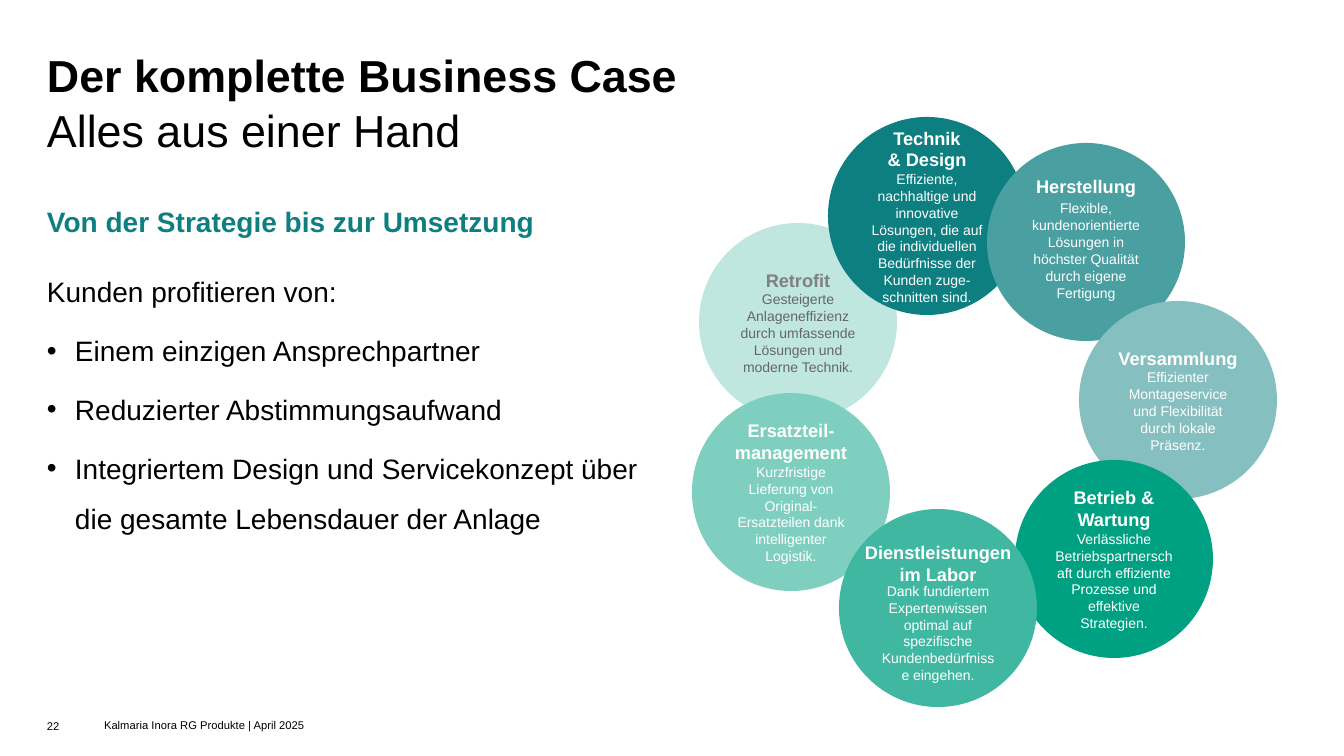
from lxml import etree
from pptx import Presentation, util as u
from pptx.dml.color import RGBColor
from pptx.enum import shapes, text
from pptx.oxml.ns import qn

BLACK = RGBColor(0x00, 0x00, 0x00)
WHITE = RGBColor(0xFF, 0xFF, 0xFF)
TEAL = RGBColor(0x0E, 0x7F, 0x80)
TEAL_MID = RGBColor(0x4A, 0x9F, 0xA0)
TEAL_PALE = RGBColor(0x86, 0xBF, 0xBF)
GREEN = RGBColor(0x00, 0xA0, 0x82)
GREEN_MID = RGBColor(0x40, 0xB8, 0xA1)
GREEN_PALE = RGBColor(0x7F, 0xCF, 0xC0)
MINT = RGBColor(0xBF, 0xE7, 0xE0)
GREY = RGBColor(0x80, 0x80, 0x80)
DARK_GREY = RGBColor(0x66, 0x66, 0x66)

FONT = "Arial"
PX = 914400 / 100.8
DIAMETER = 198
INSET_X, INSET_Y = 10, 5
INDENT = 28

TITLE = "Der komplette Business Case"
SUBTITLE = "Alles aus einer Hand"
LEAD = "Von der Strategie bis zur Umsetzung"
INTRO = "Kunden profitieren von:"
BENEFITS = [
    "Einem einzigen Ansprechpartner",
    "Reduzierter Abstimmungsaufwand",
    "Integriertem Design und Servicekonzept über die gesamte Lebensdauer der Anlage",
]
PAGE = "22"
FOOTER = "Kalmaria Inora RG Produkte | April 2025"

# left, top, fill, heading colour, body colour, heading lines, body, extra top inset
CIRCLES = [
    (699, 223, MINT, GREY, DARK_GREY, ["Retrofit"],
     "Gesteigerte Anlageneffizienz durch umfassende Lösungen und moderne Technik.", 0),
    (828, 117, TEAL, WHITE, WHITE, ["Technik", "& Design"],
     "Effiziente, nachhaltige und innovative Lösungen, die auf die individuellen "
     "Bedürfnisse der Kunden zuge-schnitten sind.", 0),
    (987, 143, TEAL_MID, WHITE, WHITE, [],
     "Flexible, kundenorientierte Lösungen in höchster Qualität durch eigene Fertigung", 17),
    (1079, 301, TEAL_PALE, WHITE, WHITE, ["Versammlung"],
     "Effizienter Montageservice und Flexibilität durch lokale Präsenz.", 0),
    (1015, 460, GREEN, WHITE, WHITE, ["Betrieb & Wartung"],
     "Verlässliche Betriebspartnerschaft durch effiziente Prozesse und effektive Strategien.", 0),
    (692, 393, GREEN_PALE, WHITE, WHITE, ["Ersatzteil-management"],
     "Kurzfristige Lieferung von Original-Ersatzteilen dank intelligenter Logistik.", 0),
    (839, 509, GREEN_MID, WHITE, WHITE, [],
     "Dank fundiertem Expertenwissen optimal auf spezifische Kundenbedürfnisse eingehen.", 50),
]
# Headings wider than the text area of their circle
WIDE_HEADINGS = [
    ((1003, 170, 166, 32), "Herstellung"),
    ((851, 536, 174, 54), "Dienstleistungen im Labor"),
]


def px(n):
    return u.Emu(round(n * PX))


def set_frame(sp, inset_x=0, inset_y=0, extra_top=0, anchor=text.MSO_ANCHOR.TOP):
    tf = sp.text_frame
    tf.word_wrap = True
    tf.auto_size = text.MSO_AUTO_SIZE.NONE
    tf.vertical_anchor = anchor
    tf.margin_left = tf.margin_right = px(inset_x)
    tf.margin_top = px(inset_y + extra_top)
    tf.margin_bottom = px(inset_y)
    return tf


def add_paragraph(tf, words, size, color=BLACK, bold=False,
                  align=text.PP_ALIGN.LEFT, bullet=False):
    """Fill the empty first paragraph, or append a new one."""
    p = tf.paragraphs[0] if not tf.paragraphs[0].runs else tf.add_paragraph()
    if bullet:
        pPr = p._p.get_or_add_pPr()
        pPr.set("marL", str(px(INDENT)))
        pPr.set("indent", str(-px(INDENT)))
        etree.SubElement(pPr, qn("a:buFont")).set("typeface", FONT)
        etree.SubElement(pPr, qn("a:buChar")).set("char", "•")
    p.alignment = align
    r = p.add_run()
    r.text = words
    r.font.name, r.font.size, r.font.bold = FONT, u.Pt(size), bold
    r.font.color.rgb = color
    return p


def add_box(s, box, anchor=text.MSO_ANCHOR.TOP, inset_x=0, inset_y=0):
    sp = s.shapes.add_textbox(*map(px, box))
    return set_frame(sp, inset_x, inset_y, anchor=anchor)


def add_circle(s, left, top, fill, head_color, body_color, heading, body, extra_top):
    sp = s.shapes.add_shape(shapes.MSO_SHAPE.OVAL, *map(px, (left, top, DIAMETER, DIAMETER)))
    sp.shadow.inherit = False
    sp.fill.solid()
    sp.fill.fore_color.rgb = fill
    sp.line.fill.background()
    tf = set_frame(sp, INSET_X, INSET_Y, extra_top, text.MSO_ANCHOR.MIDDLE)
    for line in heading:
        add_paragraph(tf, line, 13, head_color, True, text.PP_ALIGN.CENTER)
    add_paragraph(tf, body, 10, body_color, align=text.PP_ALIGN.CENTER)


def main():
    prs = Presentation()
    prs.slide_width, prs.slide_height = px(1344), px(756)
    s = prs.slides.add_slide(prs.slide_layouts[5])

    title = s.shapes.title
    title.left, title.top, title.width, title.height = map(px, (47, 48, 1060, 51))
    add_paragraph(set_frame(title), TITLE, 32, bold=True)
    add_paragraph(add_box(s, (47, 103, 1249, 51)), SUBTITLE, 32)
    add_paragraph(add_box(s, (47, 205, 613, 40)), LEAD, 20, TEAL, True)

    tf = add_box(s, (47, 258, 591, 406))
    for i, words in enumerate([INTRO] + BENEFITS):
        p = add_paragraph(tf, words, 20, bullet=i > 0)
        p.line_spacing = 1.5
        p.space_after = u.Pt(6)

    for circle in CIRCLES:
        add_circle(s, *circle)
    for box, heading in WIDE_HEADINGS:
        tf = add_box(s, box, inset_x=INSET_X, inset_y=INSET_Y)
        add_paragraph(tf, heading, 13, WHITE, True, text.PP_ALIGN.CENTER)

    add_paragraph(add_box(s, (47, 717, 49, 16), text.MSO_ANCHOR.BOTTOM), PAGE, 8)
    add_paragraph(add_box(s, (104, 717, 792, 16), text.MSO_ANCHOR.MIDDLE), FOOTER, 8)
    prs.save("out.pptx")


if __name__ == "__main__":
    main()
